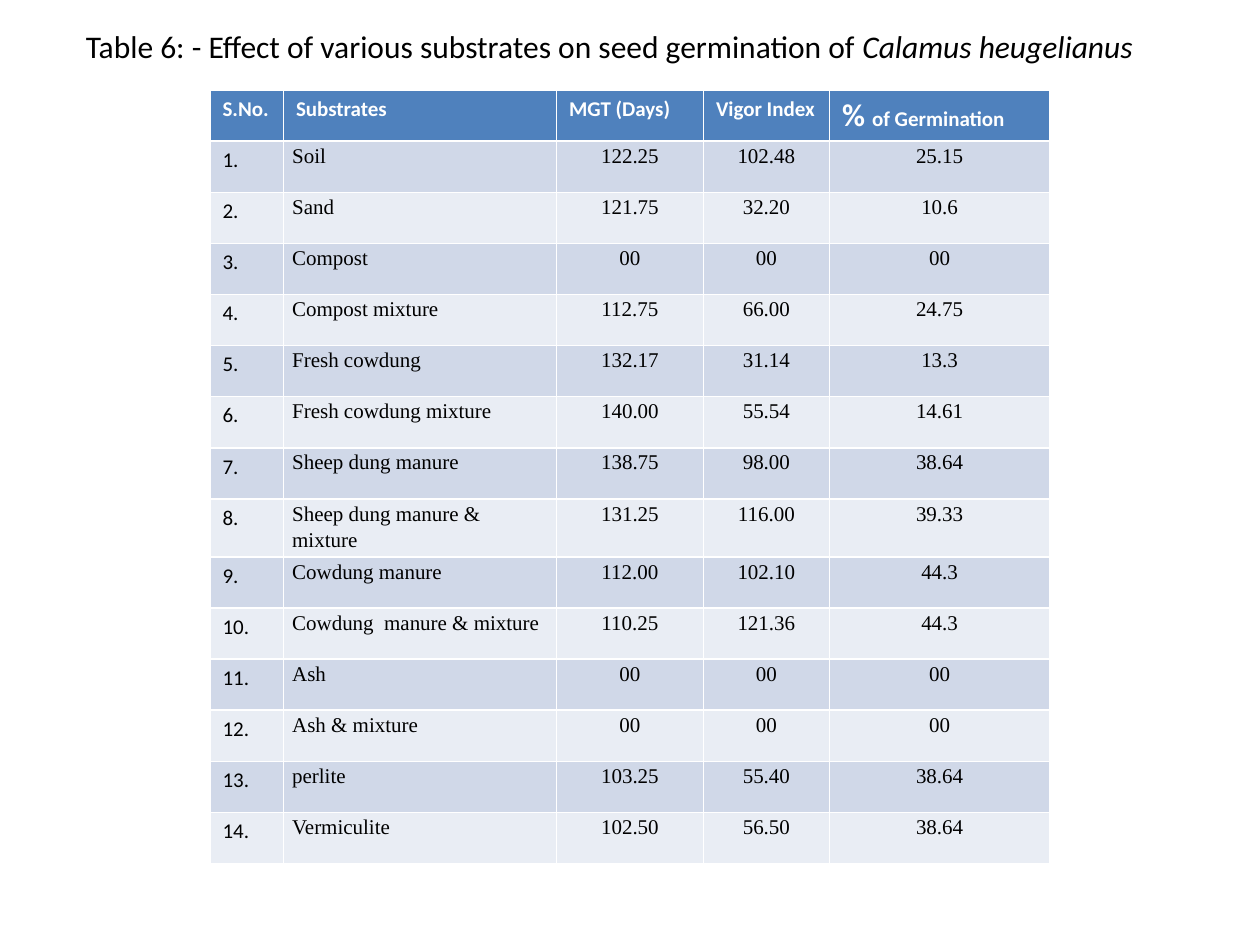
from dataclasses import dataclass

from pptx import Presentation
from pptx.dml.color import RGBColor
from pptx.enum.text import PP_ALIGN
from pptx.util import Pt

TITLE = [
    ("Table 6: - Effect of various substrates on seed germination of ", False),
    ("Calamus heugelianus", True),
]
HEADERS = ["S.No.", "Substrates", "MGT (Days)", "Vigor Index", "% of Germination"]
SUBSTRATES = [
    ("Soil", "122.25", "102.48", "25.15"),
    ("Sand", "121.75", "32.20", "10.6"),
    ("Compost", "00", "00", "00"),
    ("Compost mixture", "112.75", "66.00", "24.75"),
    ("Fresh cowdung", "132.17", "31.14", "13.3"),
    ("Fresh cowdung mixture", "140.00", "55.54", "14.61"),
    ("Sheep dung manure", "138.75", "98.00", "38.64"),
    ("Sheep dung manure & mixture", "131.25", "116.00", "39.33"),
    ("Cowdung manure", "112.00", "102.10", "44.3"),
    ("Cowdung  manure & mixture", "110.25", "121.36", "44.3"),
    ("Ash", "00", "00", "00"),
    ("Ash & mixture", "00", "00", "00"),
    ("perlite", "103.25", "55.40", "38.64"),
    ("Vermiculite", "102.50", "56.50", "38.64"),
]

TITLE_BOX = (42, 12, 618, 73)
TABLE_LEFT, TABLE_TOP = 120, 51.5
COLUMN_WIDTHS = [42, 156, 84, 72, 126]
ROW_HEIGHT = 29.2
DATA_INSET = 5


@dataclass(frozen=True)
class Theme:
    heading_font: str = "Calibri"
    data_font: str = "Times New Roman"
    large: int = 18
    small: int = 12
    text: RGBColor = RGBColor(0x00, 0x00, 0x00)
    header_text: RGBColor = RGBColor(0xFF, 0xFF, 0xFF)
    header_fill: RGBColor = RGBColor(0x4F, 0x81, 0xBD)
    bands: tuple = (RGBColor(0xD0, 0xD8, 0xE8), RGBColor(0xE9, 0xED, 0xF4))


THEME = Theme()


def add_run(paragraph, text, size=THEME.small, font=THEME.heading_font,
            color=THEME.text, bold=False, italic=False):
    run = paragraph.add_run()
    run.text = text
    run.font.size = Pt(size)
    run.font.name = font
    run.font.color.rgb = color
    run.font.bold = bold
    run.font.italic = italic


def fill_cell(cell, color):
    cell.fill.solid()
    cell.fill.fore_color.rgb = color


def add_title(slide):
    frame = slide.shapes.add_textbox(*map(Pt, TITLE_BOX)).text_frame
    frame.word_wrap = True
    for text, italic in TITLE:
        add_run(frame.paragraphs[0], text, THEME.large, italic=italic)


def write_header(cell, text):
    """Write a column heading, with a leading percent sign set larger."""
    fill_cell(cell, THEME.header_fill)
    paragraph = cell.text_frame.paragraphs[0]
    if text.startswith("% "):
        add_run(paragraph, "% ", THEME.large, color=THEME.header_text, bold=True)
        text = text.removeprefix("% ")
    add_run(paragraph, text, color=THEME.header_text, bold=True)


def write_data(cell, text, centered):
    cell.margin_left = cell.margin_right = Pt(DATA_INSET)
    cell.margin_top = cell.margin_bottom = Pt(0)
    paragraph = cell.text_frame.paragraphs[0]
    paragraph.line_spacing = 1.15
    if centered:
        paragraph.alignment = PP_ALIGN.CENTER
    add_run(paragraph, text, font=THEME.data_font)


def add_substrate_table(slide):
    row_count = len(SUBSTRATES) + 1
    table = slide.shapes.add_table(
        row_count, len(HEADERS), Pt(TABLE_LEFT), Pt(TABLE_TOP),
        Pt(sum(COLUMN_WIDTHS)), Pt(ROW_HEIGHT * row_count)).table
    for column, width in zip(table.columns, COLUMN_WIDTHS):
        column.width = Pt(width)
    for row in table.rows:
        row.height = Pt(ROW_HEIGHT)

    for column, text in enumerate(HEADERS):
        write_header(table.cell(0, column), text)
    for number, values in enumerate(SUBSTRATES, start=1):
        for column in range(len(HEADERS)):
            fill_cell(table.cell(number, column), THEME.bands[(number - 1) % 2])
        add_run(table.cell(number, 0).text_frame.paragraphs[0], f"{number}.")
        for column, text in enumerate(values, start=1):
            write_data(table.cell(number, column), text, centered=column > 1)


def main():
    presentation = Presentation()
    presentation.slide_width, presentation.slide_height = Pt(720), Pt(540)
    slide = presentation.slides.add_slide(presentation.slide_layouts[6])
    add_title(slide)
    add_substrate_table(slide)
    presentation.save("out.pptx")


if __name__ == "__main__":
    main()
